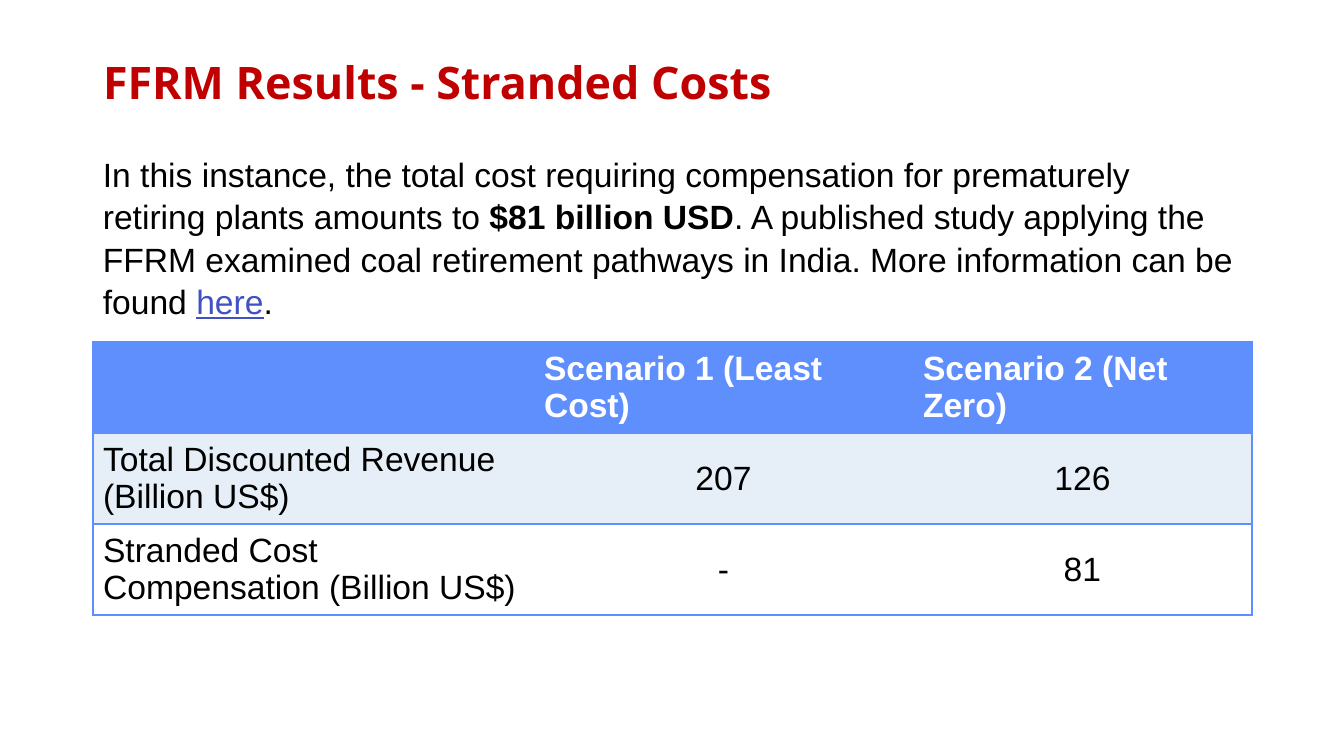
import pptx
import pptx.dml.color
import pptx.enum.text
import pptx.oxml
import pptx.oxml.ns
import pptx.util

# Content
TITLE = "FFRM Results - Stranded Costs"
BODY_RUNS = [
    ("In this instance, the total cost requiring compensation for prematurely "
     "retiring plants amounts to", {}),
    (" $81 billion USD", {"bold": True}),
    (". A published study applying the FFRM examined coal retirement pathways "
     "in India. More information can be found ", {}),
    ("here", {"color": "4151C3", "underline": True}),
    (".", {}),
]
TABLE_ROWS = [
    ("", "Scenario 1 (Least Cost)", "Scenario 2 (Net Zero)"),
    ("Total Discounted Revenue (Billion US$)", "207", "126"),
    ("Stranded Cost Compensation (Billion US$)", "-", "81"),
]
ROW_FILLS = ["5F8EFD", "E6EFF7", "FFFFFF"]
BORDER_COLOR = "5F8EFD"

# Layout in px
SLIDE_SIZE = (1344, 756)
LEFT, WIDTH = 93, 1159
TITLE_TOP, TITLE_HEIGHT = 53, 63
BODY_TOP, BODY_HEIGHT = 147, 173
TABLE_TOP, ROW_HEIGHT = 342, 91
COLUMN_WIDTHS = [441, 379, 339]

TITLE_FORMAT = {"name": "Open Sans", "size": 32, "bold": True, "color": "C00000"}
TEXT_FORMAT = {"name": "Arial", "size": 24, "bold": False, "color": "000000"}
HEADER_FORMAT = {**TEXT_FORMAT, "bold": True, "color": "FFFFFF"}

ALIGN = pptx.enum.text.PP_ALIGN
MIDDLE = pptx.enum.text.MSO_ANCHOR.MIDDLE


def px(length):
    return pptx.util.Emu(round(length * 914400 / 100.8))


def rgb(color):
    return pptx.dml.color.RGBColor.from_string(color)


def format_font(font, values):
    for name, value in values.items():
        if name == "color":
            font.color.rgb = rgb(value)
        else:
            setattr(font, name, pptx.util.Pt(value) if name == "size" else value)


def set_border(cell, position, side, color):
    namespace = pptx.oxml.ns.nsdecls("a")
    fill = f'<a:solidFill><a:srgbClr val="{color}"/></a:solidFill>' if color else "<a:noFill/>"
    line = pptx.oxml.parse_xml(f'<a:ln{side} {namespace} w="12700">{fill}</a:ln{side}>')
    cell._tc.get_or_add_tcPr().insert(position, line)


presentation = pptx.Presentation()
presentation.slide_width, presentation.slide_height = map(px, SLIDE_SIZE)
slide = presentation.slides.add_slide(presentation.slide_layouts[5])

# Title
title = slide.shapes.title
title.left, title.top, title.width, title.height = map(
    px, (LEFT, TITLE_TOP, WIDTH, TITLE_HEIGHT))
title.text_frame.text = TITLE
title.text_frame.vertical_anchor = MIDDLE
title.text_frame.auto_size = pptx.enum.text.MSO_AUTO_SIZE.NONE
paragraph = title.text_frame.paragraphs[0]
paragraph.alignment = ALIGN.LEFT
paragraph.line_spacing = 0.9
format_font(paragraph.runs[0].font, TITLE_FORMAT)

# Explanation
body = slide.shapes.add_textbox(*map(px, (LEFT, BODY_TOP, WIDTH, BODY_HEIGHT)))
body.text_frame.word_wrap = True
paragraph = body.text_frame.paragraphs[0]
paragraph.line_spacing = 1.05
for text, changes in BODY_RUNS:
    run = paragraph.add_run()
    run.text = text
    format_font(run.font, {**TEXT_FORMAT, **changes})

# Cost table
row_count, column_count = len(TABLE_ROWS), len(COLUMN_WIDTHS)
table = slide.shapes.add_table(
    row_count, column_count,
    *map(px, (LEFT, TABLE_TOP, WIDTH, ROW_HEIGHT * row_count))).table
for column, width in zip(table.columns, COLUMN_WIDTHS):
    column.width = px(width)
for row_index, (texts, fill) in enumerate(zip(TABLE_ROWS, ROW_FILLS)):
    table.rows[row_index].height = px(ROW_HEIGHT)
    for column_index, text in enumerate(texts):
        cell = table.cell(row_index, column_index)
        cell.text = text
        cell.vertical_anchor = MIDDLE
        cell.fill.solid()
        cell.fill.fore_color.rgb = rgb(fill)
        paragraph = cell.text_frame.paragraphs[0]
        is_value = row_index > 0 and column_index > 0
        paragraph.alignment = ALIGN.CENTER if is_value else ALIGN.LEFT
        format_font(paragraph.font, TEXT_FORMAT if row_index else HEADER_FORMAT)
        # Outer frame and row rules, no rules between columns
        borders = {
            "L": BORDER_COLOR if column_index == 0 else None,
            "R": BORDER_COLOR if column_index == column_count - 1 else None,
            "T": BORDER_COLOR,
            "B": BORDER_COLOR,
        }
        for position, (side, color) in enumerate(borders.items()):
            set_border(cell, position, side, color)

presentation.save("out.pptx")
